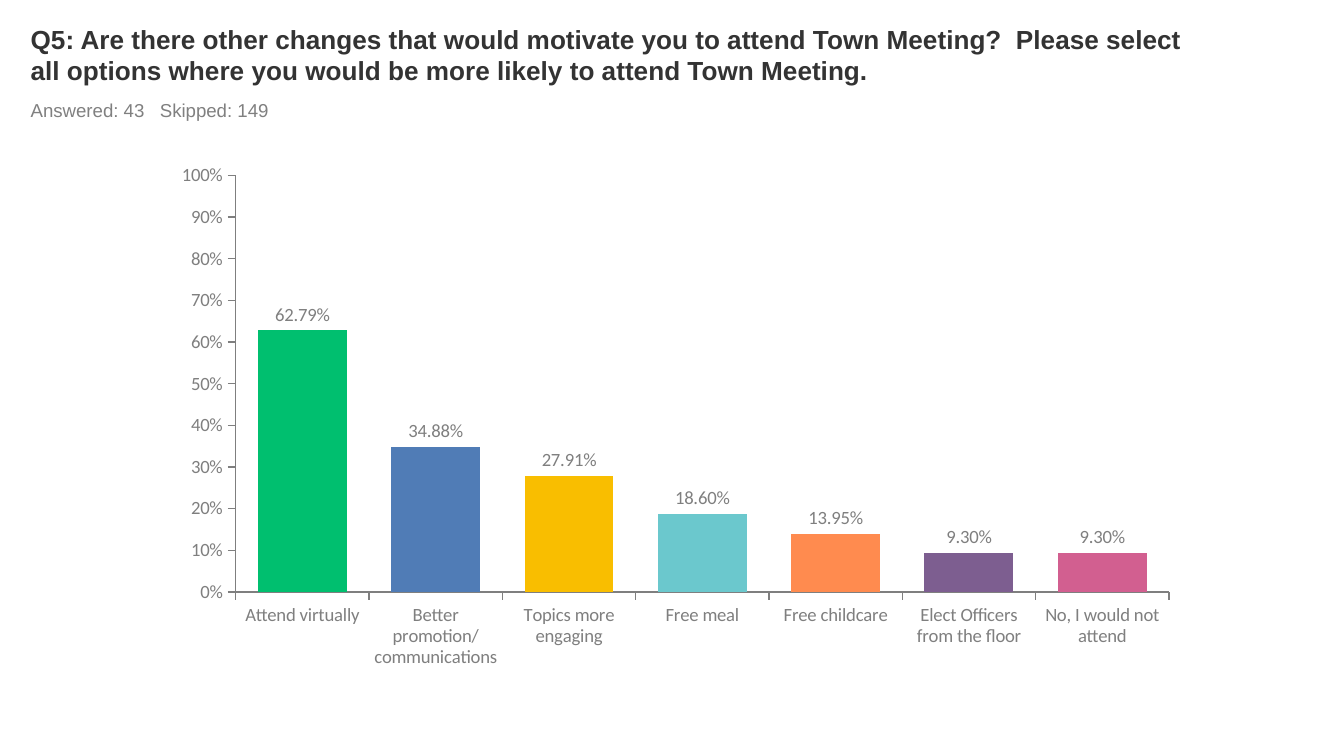
from typing import NamedTuple

from pptx import Presentation
from pptx.chart.data import CategoryChartData
from pptx.dml.color import RGBColor
from pptx.enum.chart import XL_CHART_TYPE, XL_LABEL_POSITION, XL_TICK_LABEL_POSITION, XL_TICK_MARK
from pptx.enum.text import MSO_ANCHOR
from pptx.util import Inches, Pt


class Answer(NamedTuple):
    option: str
    share: float
    color: str


ANSWERS = [
    Answer("Attend virtually", 0.6279, "00BF6F"),
    Answer("Better promotion/communications", 0.3488, "507CB6"),
    Answer("Topics more engaging", 0.2791, "F9BE00"),
    Answer("Free meal", 0.1860, "6BC8CD"),
    Answer("Free childcare", 0.1395, "FF8B4F"),
    Answer("Elect Officers from the floor", 0.0930, "7D5E90"),
    Answer("No, I would not attend", 0.0930, "D25F90"),
]
DARK, GRAY, AXIS_GRAY = "333333", "808080", "7F7F7F"


def rgb(color: str) -> RGBColor:
    return RGBColor.from_string(color)


def style_font(font, *, name: str, size: float, color: str, bold: bool = False) -> None:
    font.name = name
    font.size = Pt(size)
    font.bold = bold
    font.color.rgb = rgb(color)


def add_text(page, text: str, *, top: float, height: float, size: float, color: str,
             bold: bool = False, anchor=MSO_ANCHOR.TOP) -> None:
    box = page.shapes.add_textbox(Inches(0.13), Inches(top), Inches(9), Inches(height))
    frame = box.text_frame
    frame.word_wrap = True
    frame.vertical_anchor = anchor
    span = frame.paragraphs[0].add_run()
    span.text = text
    style_font(span.font, name="Arial", size=size, color=color, bold=bold)


def style_axis(axis) -> None:
    axis.has_major_gridlines = False
    axis.major_tick_mark = XL_TICK_MARK.OUTSIDE
    axis.minor_tick_mark = XL_TICK_MARK.NONE
    axis.format.line.color.rgb = rgb(AXIS_GRAY)
    axis.format.line.width = Pt(0.75)
    style_font(axis.tick_labels.font, name="Calibri", size=10, color=AXIS_GRAY)


def add_answer_chart(page, answers: list[Answer]) -> None:
    data = CategoryChartData(number_format="0.00%")
    data.categories = [answer.option for answer in answers]
    data.add_series("Series 1", [answer.share for answer in answers])
    chart = page.shapes.add_chart(XL_CHART_TYPE.COLUMN_CLUSTERED, Inches(1.2), Inches(1.15),
                                  Inches(7.65), Inches(3.9), data).chart
    chart.has_legend = False
    chart.has_title = False
    style_font(chart.font, name="Calibri", size=18, color=DARK)

    style_axis(chart.category_axis)
    chart.category_axis.tick_label_position = XL_TICK_LABEL_POSITION.LOW
    shares = chart.value_axis
    style_axis(shares)
    shares.minimum_scale, shares.maximum_scale, shares.major_unit = 0, 1, 0.1
    shares.tick_labels.number_format = "0%"
    shares.tick_labels.number_format_is_linked = False

    plot = chart.plots[0]
    plot.gap_width, plot.overlap = 50, 100
    plot.vary_by_categories = False
    series = plot.series[0]
    series.invert_if_negative = False
    series.format.fill.solid()
    series.format.fill.fore_color.rgb = rgb(answers[0].color)
    for index, answer in enumerate(answers):
        fill = series.points[index].format.fill
        fill.solid()
        fill.fore_color.rgb = rgb(answer.color)

    labels = series.data_labels
    labels.show_value = True
    labels.position = XL_LABEL_POSITION.OUTSIDE_END
    labels.number_format = "0.00%"
    labels.number_format_is_linked = False
    style_font(labels.font, name="Calibri", size=10, color=AXIS_GRAY)


def main() -> None:
    deck = Presentation()
    deck.slide_width = Inches(10)
    deck.slide_height = Inches(10 * 9 / 16)
    page = deck.slides.add_slide(deck.slide_layouts[6])
    add_text(page, "Q5: Are there other changes that would motivate you to attend Town Meeting?  "
             "Please select all options where you would be more likely to attend Town Meeting.",
             top=0.09, height=0.6, size=14, color=DARK, bold=True, anchor=MSO_ANCHOR.BOTTOM)
    add_text(page, "Answered: 43   Skipped: 149", top=0.69, height=0.26, size=10, color=GRAY)
    add_answer_chart(page, ANSWERS)
    deck.save("out.pptx")


if __name__ == "__main__":
    main()
